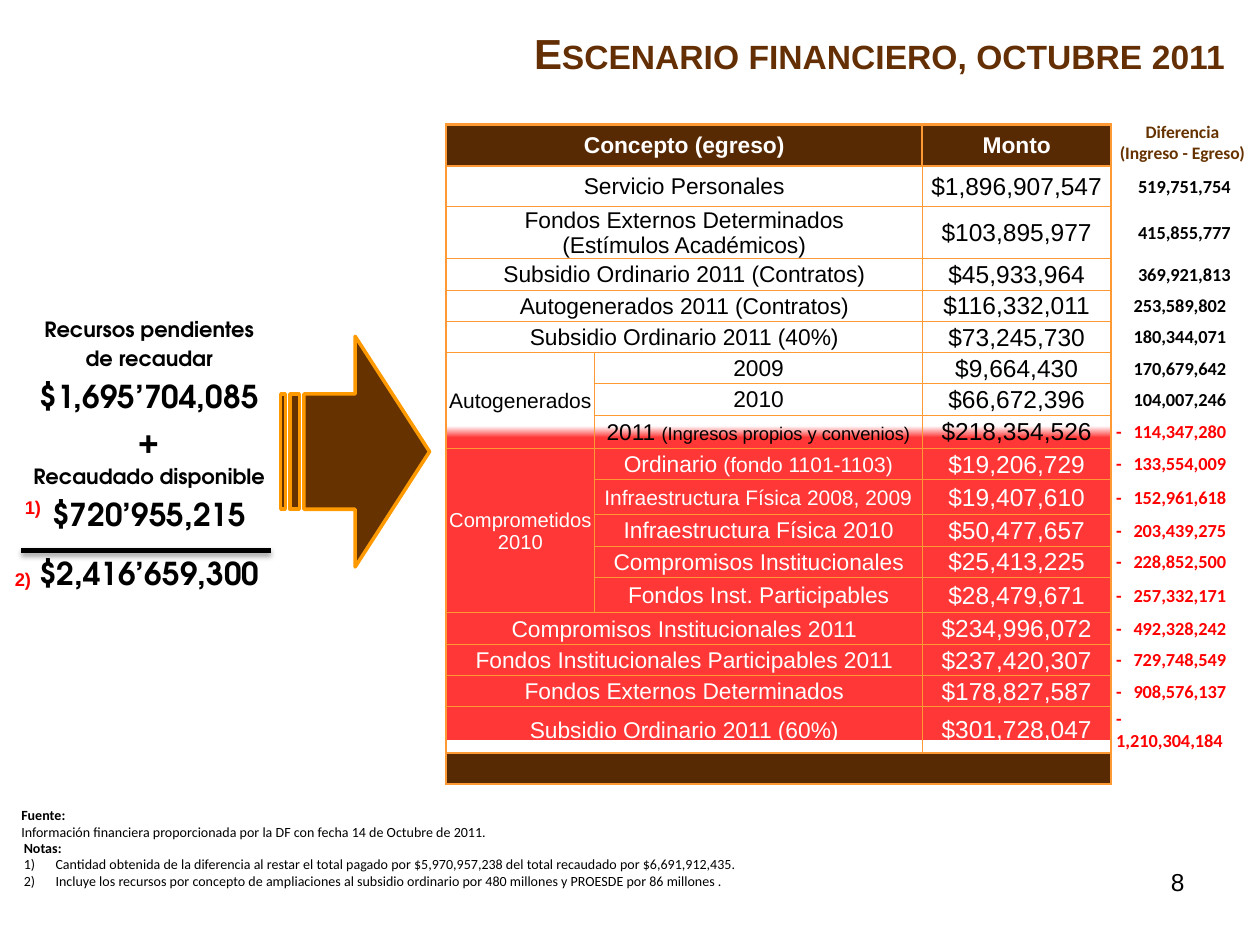
"""Builds the slide on the financial scenario of October 2011."""
from lxml.etree import SubElement
from pptx import Presentation
from pptx.dml.color import RGBColor
from pptx.enum.shapes import MSO_CONNECTOR, MSO_SHAPE
from pptx.enum.text import MSO_ANCHOR, PP_ALIGN
from pptx.oxml.ns import qn
from pptx.util import Cm, Pt

COLORS = {
    "white": "FFFFFF", "black": "000000", "red": "FF0000", "alert": "FF3737",
    "header": "582A04", "border": "FF9933", "arrow": "663300",
    "outline": "FF9900", "title": "642F04",
}
NO_STYLE = "{2D5ABB26-0587-4C30-8999-92F81FD0307C}"


def style(paragraph, font, size, color, bold=False, align=PP_ALIGN.LEFT):
    paragraph.alignment = align
    paragraph.font.name = font
    paragraph.font.size = Pt(size)
    paragraph.font.bold = bold
    paragraph.font.color.rgb = RGBColor.from_string(COLORS[color])


def add_text(box, lines, font, color, align=PP_ALIGN.LEFT, wrap=True):
    shape = slide.shapes.add_textbox(*[Cm(length) for length in box])
    frame = shape.text_frame
    frame.word_wrap = wrap
    frame.text = "\n".join(line[0] for line in lines)
    for paragraph, (text, size, bold, space) in zip(frame.paragraphs, lines):
        paragraph.space_before = Pt(space)
        style(paragraph, font, size, color, bold, align)
    return frame


presentation = Presentation()
presentation.slide_width = Cm(25.4)
presentation.slide_height = Cm(19.05)
slide = presentation.slides.add_slide(presentation.slide_layouts[6])

backdrop = slide.shapes.add_shape(
    MSO_SHAPE.FLOWCHART_PROCESS, Cm(8.99), Cm(3.2), Cm(13.74), Cm(11.71))
backdrop.shadow.inherit = False
backdrop.line.fill.background()
backdrop.fill.gradient()
backdrop.fill.gradient_angle = 270
stops = backdrop._element.spPr.find(qn("a:gradFill")).find(qn("a:gsLst"))
for stop in list(stops):
    stops.remove(stop)
for position, color in ((0, "white"), (46, "white"), (48, "alert")):
    stop = SubElement(stops, qn("a:gs"), pos=str(position * 1000))
    SubElement(stop, qn("a:srgbClr"), val=COLORS[color])

rows = [
    ("Concepto (egreso)", "", "Monto", ""),
    ("Servicio Personales", "", "$1,896,907,547", "519,751,754"),
    ("Fondos Externos Determinados\n(Estímulos Académicos)", "", "$103,895,977", "415,855,777"),
    ("Subsidio Ordinario 2011 (Contratos)", "", "$45,933,964", "369,921,813"),
    ("Autogenerados 2011 (Contratos)", "", "$116,332,011", "253,589,802"),
    ("Subsidio Ordinario 2011 (40%)", "", "$73,245,730", "180,344,071"),
    ("Autogenerados", "2009", "$9,664,430", "170,679,642"),
    ("", "2010", "$66,672,396", "104,007,246"),
    ("", "2011 ", "$218,354,526", "-\t114,347,280"),
    ("Comprometidos\v2010", "Ordinario ", "$19,206,729", "-\t133,554,009"),
    ("", "Infraestructura Física 2008, 2009", "$19,407,610", "-\t152,961,618"),
    ("", "Infraestructura Física 2010", "$50,477,657", "-\t203,439,275"),
    ("", "Compromisos Institucionales", "$25,413,225", "-\t228,852,500"),
    ("", "Fondos Inst. Participables", "$28,479,671", "-\t257,332,171"),
    ("Compromisos Institucionales 2011", "", "$234,996,072", "-\t492,328,242"),
    ("Fondos Institucionales Participables 2011", "", "$237,420,307", "-\t729,748,549"),
    ("Fondos Externos Determinados", "", "$178,827,587", "-\t908,576,137"),
    ("Subsidio Ordinario 2011 (60%)", "", "$301,728,047", "- 1,210,304,184"),
    ("", "", "", ""),
]
special_heights = {0: 0.84, 1: 0.81, 2: 1.03, 8: 0.67, 10: 0.71, 13: 0.72}
special_sizes = {(6, 0): 12, (9, 0): 11.5, (10, 1): 12}
details = {(8, 1): ("(Ingresos propios y convenios)", 10.5), (9, 1): ("(fondo 1101-1103)", 12)}
last = len(rows) - 1

table = slide.shapes.add_table(
    len(rows), 4, Cm(8.99), Cm(2.51), Cm(15.85), Cm(13.03)).table
table.first_row = table.horz_banding = False
table._tbl.tblPr.find(qn("a:tableStyleId")).text = NO_STYLE
for column, width in zip(table.columns, (3, 6.6, 3.81, 2.44)):
    column.width = Cm(width)
for index in range(len(rows)):
    table.rows[index].height = Cm(special_heights.get(index, 0.63))
    if not 6 <= index <= 13:
        table.cell(index, 0).merge(table.cell(index, 1))
table.cell(6, 0).merge(table.cell(8, 0))
table.cell(9, 0).merge(table.cell(13, 0))

for row, values in enumerate(rows):
    for column, text in enumerate(values):
        cell = table.cell(row, column)
        cell.vertical_anchor = MSO_ANCHOR.MIDDLE
        cell.margin_left = cell.margin_right = cell.margin_top = Cm(0.03)
        cell.margin_bottom = 0
        if column < 3:
            thick = {
                "L": column == 0 or row == 0, "R": column == 2 or row == 0,
                "T": row in (0, 1, last), "B": row in (0, last - 1, last),
            }
            for side, is_thick in thick.items():
                if row == last and side in "LR" and not is_thick:
                    continue
                line = SubElement(cell._tc.get_or_add_tcPr(), qn(f"a:ln{side}"),
                                  w=str(Pt(1.5 if is_thick else 0.5)))
                fill = SubElement(line, qn("a:solidFill"))
                SubElement(fill, qn("a:srgbClr"), val=COLORS["border"])
        if column < 3 and (row >= 8 or (row, column) == (6, 0)) and row != last:
            cell.fill.background()
        else:
            cell.fill.solid()
            fill_name = "header" if column < 3 and row in (0, last) else "white"
            cell.fill.fore_color.rgb = RGBColor.from_string(COLORS[fill_name])
        if not text:
            SubElement(cell.text_frame.paragraphs[0]._p, qn("a:endParaRPr"), sz="800")
            continue
        cell.text = text
        for paragraph in cell.text_frame.paragraphs:
            if column < 3:
                size = 14 if column == 2 and row else special_sizes.get((row, column), 13)
                color = "white" if row == 0 or row >= 9 else "black"
                style(paragraph, "Arial", size, color, row == 0, PP_ALIGN.CENTER)
            elif text.startswith("-"):
                cell.margin_left = Cm(0.1)
                tabs = SubElement(paragraph._p.get_or_add_pPr(), qn("a:tabLst"))
                SubElement(tabs, qn("a:tab"), pos=str(Cm(2.22)), algn="r")
                style(paragraph, "Calibri", 10.5, "red", True)
            else:
                cell.margin_right = Cm(0.03 if row < 4 else 0.12)
                style(paragraph, "Calibri", 10.5, "black", True, PP_ALIGN.RIGHT)
        if (row, column) in details:
            detail, size = details[row, column]
            run = cell.text_frame.paragraphs[0].add_run()
            run.text = detail
            run.font.size = Pt(size)

add_text((-0.05, 6.25, 6.12, 6.93), [
    ("Recursos pendientes", 12, True, 0),
    ("de recaudar", 12, True, 2.4),
    ("$1,695’704,085", 18, True, 3.6),
    ("+", 18, True, 3.6),
    ("Recaudado disponible", 12, True, 2.4),
    ("$720’955,215", 18, True, 3.6),
    ("$2,416’659,300", 18, True, 12.5),
], "TeX Gyre Adventor", "black", PP_ALIGN.CENTER)
add_text((18.21, 17.35, 5.92, 1.32), [("8", 14, False, 0)], "Arial", "black", PP_ALIGN.RIGHT)

arrow = slide.shapes.add_shape(
    MSO_SHAPE.STRIPED_RIGHT_ARROW, Cm(5.66), Cm(6.78), Cm(3), Cm(4.65))
arrow.shadow.inherit = False
arrow.fill.solid()
arrow.fill.fore_color.rgb = RGBColor.from_string(COLORS["arrow"])
arrow.line.color.rgb = RGBColor.from_string(COLORS["outline"])
arrow.line.width = Pt(2)

sum_line = slide.shapes.add_connector(
    MSO_CONNECTOR.STRAIGHT, Cm(0.43), Cm(11.1), Cm(5.46), Cm(11.1))
sum_line.line.color.rgb = RGBColor.from_string(COLORS["black"])
sum_line.line.width = Pt(3)
effects = SubElement(sum_line._element.spPr, qn("a:effectLst"))
shadow = SubElement(effects, qn("a:outerShdw"), blurRad=str(Pt(3.1)), dist=str(Pt(1.6)),
                    dir="5400000", rotWithShape="0")
shadow_color = SubElement(shadow, qn("a:srgbClr"), val=COLORS["black"])
SubElement(shadow_color, qn("a:alpha"), val="38000")

for label, left, top in (("1)", 0.25, 9.88), ("2)", 0.05, 11.33)):
    add_text((left, top, 0.85, 0.72), [(label, 10.5, True, 0)], "Arial", "red", wrap=False)

notes = add_text((0.23, 16.79, 20.93, 1.27), [
    ("Notas:", 8, True, 0),
    ("Cantidad obtenida de la diferencia al restar el total pagado por $5,970,957,238 "
     "del total recaudado por $6,691,912,435.", 8, False, 0),
    ("Incluye los recursos por concepto de ampliaciones al subsidio ordinario "
     "por 480 millones y PROESDE por 86 millones .", 8, False, 0),
], "Calibri", "black")
for paragraph in notes.paragraphs[1:]:
    properties = paragraph._p.get_or_add_pPr()
    properties.set("marL", str(Cm(0.64)))
    properties.set("indent", str(Cm(-0.64)))
    number = SubElement(properties, qn("a:buAutoNum"), type="arabicParenR")
    properties.find(qn("a:defRPr")).addprevious(number)

add_text((0.18, 16.13, 20.07, 0.94), [
    ("Fuente:", 8, True, 0),
    ("Información financiera proporcionada por la DF con fecha 14 de Octubre de 2011.",
     8, False, 0),
], "Calibri", "black")

title = add_text((2.08, 0.28, 22.86, 1.57), [("Escenario financiero, octubre 2011", 24, True, 0)],
                 "Arial", "title", PP_ALIGN.RIGHT)
title.vertical_anchor = MSO_ANCHOR.MIDDLE
title.paragraphs[0].runs[0]._r.get_or_add_rPr().set("cap", "small")

add_text((22.3, 2.31, 3.07, 1.12),
         [("Diferencia", 10, True, 0), ("(Ingreso - Egreso)", 10, True, 0)],
         "Calibri", "arrow", PP_ALIGN.CENTER, wrap=False)

presentation.save("out.pptx")
